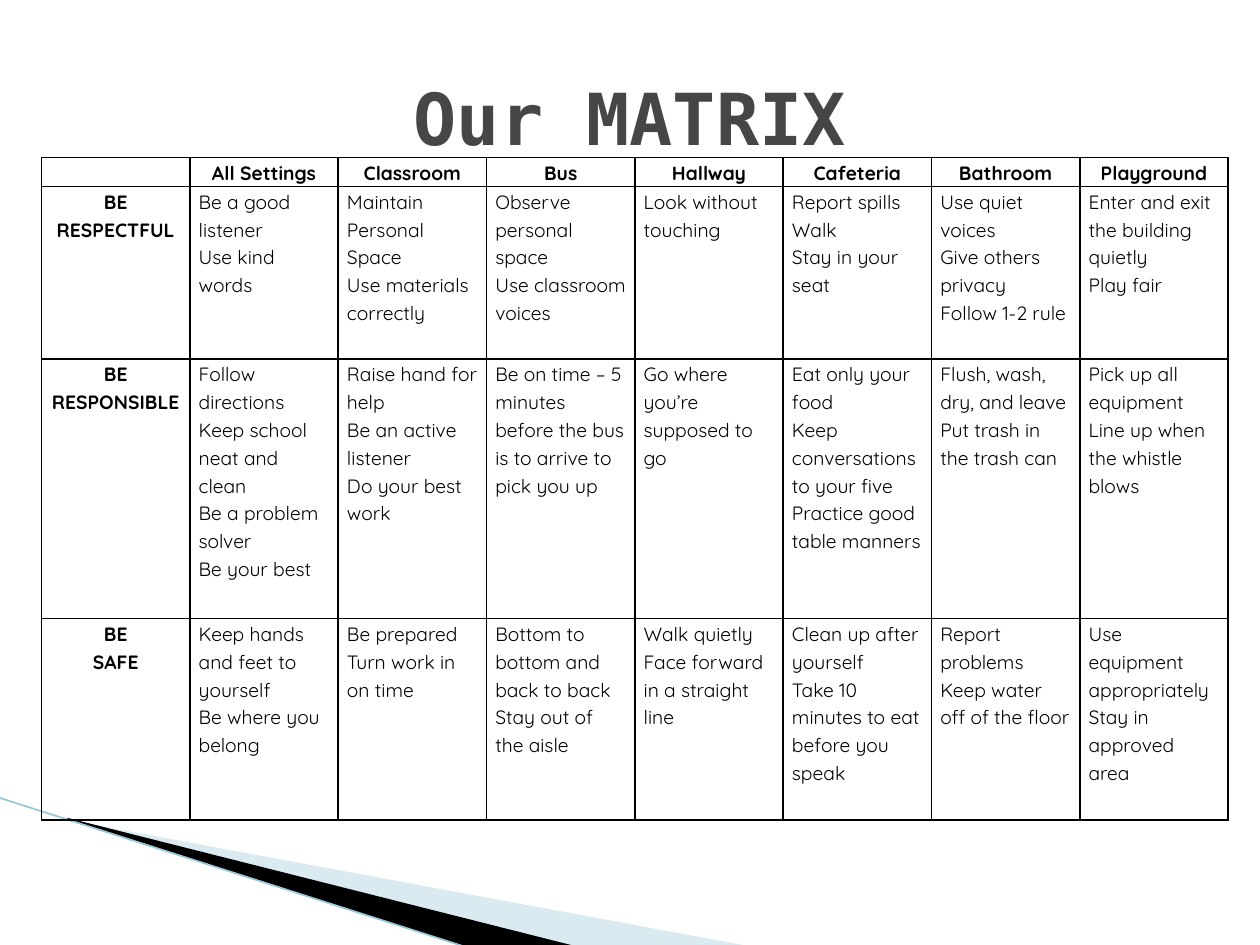
"""Build the behaviour matrix slide."""
from lxml import etree
from pptx import Presentation
from pptx.dml.color import RGBColor
from pptx.enum.shapes import MSO_CONNECTOR
from pptx.enum.text import MSO_ANCHOR, PP_ALIGN
from pptx.oxml.ns import qn
from pptx.util import Inches, Pt

LINE = MSO_CONNECTOR.STRAIGHT
MIDDLE = MSO_ANCHOR.MIDDLE
CENTER, LEFT = PP_ALIGN.CENTER, PP_ALIGN.LEFT
BLACK = RGBColor(0, 0, 0)
GRAY = RGBColor(0x46, 0x46, 0x46)
PALE = RGBColor(0xA0, 0xCB, 0xDC)
BLUE = RGBColor(0x97, 0xC5, 0xD8)

HEADS = ["", "All Settings", "Classroom", "Bus", "Hallway", "Cafeteria",
         "Bathroom", "Playground"]
RESPECT = [
    "BE RESPECTFUL",
    "Be a good listener\nUse kind words",
    "Maintain Personal Space\nUse materials correctly",
    "Observe personal space\nUse classroom voices",
    "Look without touching",
    "Report spills\nWalk\nStay in your seat",
    "Use quiet voices\nGive others privacy\nFollow 1-2 rule",
    "Enter and exit the building quietly\nPlay fair",
]
DUTY = [
    "BE RESPONSIBLE",
    "Follow directions\nKeep school neat and clean\nBe a problem solver\nBe your best",
    "Raise hand for help\nBe an active listener\nDo your best work",
    "Be on time – 5 minutes before the bus is to arrive to pick you up",
    "Go where you’re supposed to go",
    "Eat only your food\nKeep conversations to your five\nPractice good table manners",
    "Flush, wash, dry, and leave\nPut trash in the trash can",
    "Pick up all equipment\nLine up when the whistle blows",
]
SAFE = [
    "BE\nSAFE",
    "Keep hands and feet to yourself\nBe where you belong",
    "Be prepared\nTurn work in on time",
    "Bottom to bottom and back to back\nStay out of the aisle",
    "Walk quietly\nFace forward in a straight line",
    "Clean up after yourself\nTake 10 minutes to eat before you speak",
    "Report problems\nKeep water off of the floor",
    "Use equipment appropriately\nStay in approved area",
]
ROWS = [HEADS, RESPECT, DUTY, SAFE]
TALL = [0.23, 1.37, 2.06, 1.6]


def wedge(shapes, color, points):
    spots = [(Inches(x), Inches(y)) for x, y in points]
    form = shapes.build_freeform(*spots[0])
    form.add_line_segments(spots[1:])
    shape = form.convert_to_shape()
    shape.shadow.inherit = False
    shape.fill.solid()
    shape.fill.fore_color.rgb = color
    shape.line.fill.background()
    return shape


def border(cell):
    props = cell._tc.get_or_add_tcPr()
    for side in ("a:lnL", "a:lnR", "a:lnT", "a:lnB"):
        edge = etree.SubElement(props, qn(side), w=str(Pt(1)))
        fill = etree.SubElement(edge, qn("a:solidFill"))
        etree.SubElement(fill, qn("a:srgbClr"), val=str(BLACK))


deck = Presentation()
deck.slide_width, deck.slide_height = Inches(10), Inches(7.5)
slide = deck.slides.add_slide(deck.slide_layouts[5])
shapes = slide.shapes

light = wedge(shapes, PALE, [(0.55, 6.51), (5.95, 7.51), (4.56, 7.51), (0.55, 6.5)])
tint = light.fill._xPr.find(qn("a:solidFill"))[0]
etree.SubElement(tint, qn("a:alpha"), val="40000")
wedge(shapes, BLACK, [(0.53, 6.49), (4.57, 7.51), (3.72, 7.52), (0.54, 6.5)])
rule = shapes.add_connector(LINE, Inches(-0.01), Inches(6.33), Inches(3.71), Inches(7.52))
rule.line.color.rgb = BLUE
rule.line.width = Pt(0.95)
etree.SubElement(rule._element.spPr, qn("a:effectLst"))

table = shapes.add_table(len(ROWS), len(HEADS), Inches(0.33), Inches(1.25),
                         Inches(9.42), Inches(sum(TALL))).table
table.first_row = table.horz_banding = False
for r, texts in enumerate(ROWS):
    table.rows[r].height = Inches(TALL[r])
    for c, text in enumerate(texts):
        cell = table.cell(r, c)
        cell.margin_left = cell.margin_right = Inches(0.07)
        cell.margin_top = cell.margin_bottom = 0
        border(cell)
        cell.fill.background()
        cell.text_frame.text = text
        head = r == 0 or c == 0
        for para in cell.text_frame.paragraphs:
            para.alignment = CENTER if head else LEFT
            para.line_spacing = 1.15
            for run in para.runs:
                font = run.font
                font.name, font.size, font.bold = "Quicksand", Pt(11), head
                font.color.rgb = BLACK
            if not para.runs:
                etree.SubElement(para._p, qn("a:endParaRPr"), sz="1100")

title = shapes.title
title.left, title.top = Inches(0.5), Inches(0.3)
title.width, title.height = Inches(9), Inches(1.25)
frame = title.text_frame
frame.text = "Our MATRIX"
frame.vertical_anchor = MIDDLE
frame.paragraphs[0].alignment = CENTER
font = frame.paragraphs[0].runs[0].font
font.name, font.size, font.bold = "DejaVu Sans Mono", Pt(41), True
font.color.rgb = GRAY

deck.save("out.pptx")
